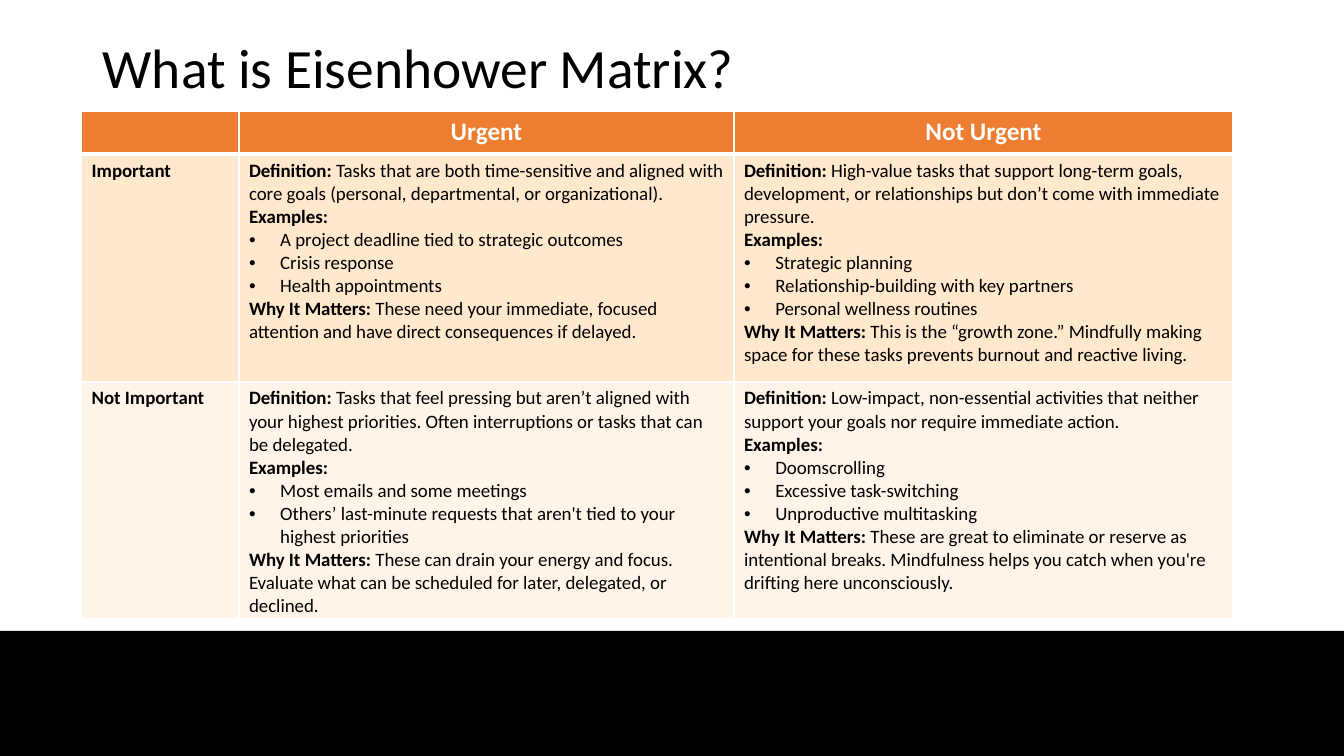
from lxml.etree import SubElement
from pptx import Presentation
from pptx.dml.color import RGBColor
from pptx.enum.shapes import MSO_SHAPE
from pptx.enum.text import MSO_ANCHOR, PP_ALIGN
from pptx.oxml.ns import qn
from pptx.util import Pt

SCALE = 9144
BLACK, WHITE, ORANGE = "000000", "FFFFFF", "ED7D31"
TINTS = ["FFE8CC", "FFF4E7"]
HEADS = ["", "Urgent", "Not Urgent"]
ROWS = [
    ("Important", [
        ("Tasks that are both time-sensitive and aligned with core goals (personal, departmental, or organizational).",
         ["A project deadline tied to strategic outcomes", "Crisis response", "Health appointments"],
         "These need your immediate, focused attention and have direct consequences if delayed."),
        ("High-value tasks that support long-term goals, development, or relationships but don’t come with immediate pressure.",
         ["Strategic planning", "Relationship-building with key partners", "Personal wellness routines"],
         "This is the “growth zone.” Mindfully making space for these tasks prevents burnout and reactive living."),
    ]),
    ("Not Important", [
        ("Tasks that feel pressing but aren’t aligned with your highest priorities. Often interruptions or tasks that can be delegated.",
         ["Most emails and some meetings",
          "Others’ last-minute requests that aren't tied to your highest priorities"],
         "These can drain your energy and focus. Evaluate what can be scheduled for later, delegated, or declined."),
        ("Low-impact, non-essential activities that neither support your goals nor require immediate action.",
         ["Doomscrolling", "Excessive task-switching", "Unproductive multitasking"],
         "These are great to eliminate or reserve as intentional breaks. Mindfulness helps you catch when you're drifting here unconsciously."),
    ]),
]


def px(*sizes):
    return [size * SCALE for size in sizes]


def color(code):
    return RGBColor.from_string(code)


class Deck:
    def __init__(self, wide, high):
        self.face = "Calibri"
        self.file = Presentation()
        self.file.slide_width, self.file.slide_height = px(wide, high)
        self.slide = self.file.slides.add_slide(self.file.slide_layouts[6])

    def style(self, run, size, code=BLACK, bold=False):
        font = run.font
        font.name, font.size, font.bold = self.face, Pt(size), bold
        font.color.rgb = color(code)

    def block(self, box, fill):
        shape = self.slide.shapes.add_shape(MSO_SHAPE.RECTANGLE, *px(*box))
        shape.shadow.inherit = False
        shape.fill.solid()
        shape.fill.fore_color.rgb = color(fill)
        shape.line.fill.background()

    def title(self, box, text, size):
        frame = self.slide.shapes.add_textbox(*px(*box)).text_frame
        frame.word_wrap = True
        frame.vertical_anchor = MSO_ANCHOR.MIDDLE
        frame.text = text
        frame.paragraphs[0].line_spacing = 0.9
        self.style(frame.paragraphs[0].runs[0], size)

    def grid(self, spot, cols, rows):
        size = (sum(cols), sum(rows))
        table = self.slide.shapes.add_table(len(rows), len(cols), *px(*spot, *size)).table
        table.first_row = table.horz_banding = False
        for col, wide in zip(table.columns, px(*cols)):
            col.width = wide
        for row, high in zip(table.rows, px(*rows)):
            row.height = high
        return table

    def paint(self, cell, fill, top=1, base=1):
        props = cell._tc.get_or_add_tcPr()
        for side, wide in zip("LRTB", (1, 1, top, base)):
            line = SubElement(props, qn(f"a:ln{side}"), w=str(Pt(wide)))
            SubElement(SubElement(line, qn("a:solidFill")), qn("a:srgbClr"), val=WHITE)
        cell.fill.solid()
        cell.fill.fore_color.rgb = color(fill)

    def label(self, cell, text, size, code=BLACK, align=PP_ALIGN.LEFT):
        cell.text = text
        para = cell.text_frame.paragraphs[0]
        para.alignment = align
        for run in para.runs:
            self.style(run, size, code, True)

    def term(self, para, head, text, size):
        for part, bold in ((head, True), (text, False)):
            run = para.add_run()
            run.text = part
            self.style(run, size, bold=bold)

    def bullet(self, para, text, size):
        props = para._p.get_or_add_pPr()
        indent = px(31)[0]
        props.set("marL", str(indent))
        props.set("indent", str(-indent))
        SubElement(props, qn("a:buFont"), typeface="Arial")
        SubElement(props, qn("a:buChar"), char="•")
        para.text = text
        self.style(para.runs[0], size)

    def detail(self, cell, task, size):
        sense, cases, reason = task
        frame = cell.text_frame
        para = frame.paragraphs[0]
        self.term(para, "Definition:", " " + sense, size)
        para.add_line_break()
        run = para.add_run()
        run.text = "Examples:"
        self.style(run, size, bold=True)
        for case in cases:
            self.bullet(frame.add_paragraph(), case, size)
        self.term(frame.add_paragraph(), "Why It Matters:", " " + reason, size)


def main():
    deck = Deck(1333, 750)
    deck.block((0, 626, 1333, 124), BLACK)
    deck.title((92, 40, 1049, 60), "What is Eisenhower Matrix?", 39.6)
    table = deck.grid((81, 111), [156, 491, 495], [42, 226, 235])
    for col, head in enumerate(HEADS):
        cell = table.cell(0, col)
        deck.paint(cell, ORANGE, base=3)
        deck.label(cell, head, 18, WHITE, PP_ALIGN.CENTER)
    for row, (name, tasks) in enumerate(ROWS, 1):
        for col in range(len(HEADS)):
            deck.paint(table.cell(row, col), TINTS[row - 1], top=3 if row == 1 else 1)
        deck.label(table.cell(row, 0), name, 13.5)
        for col, task in enumerate(tasks, 1):
            deck.detail(table.cell(row, col), task, 13.5)
    deck.file.save("out.pptx")


if __name__ == "__main__":
    main()
